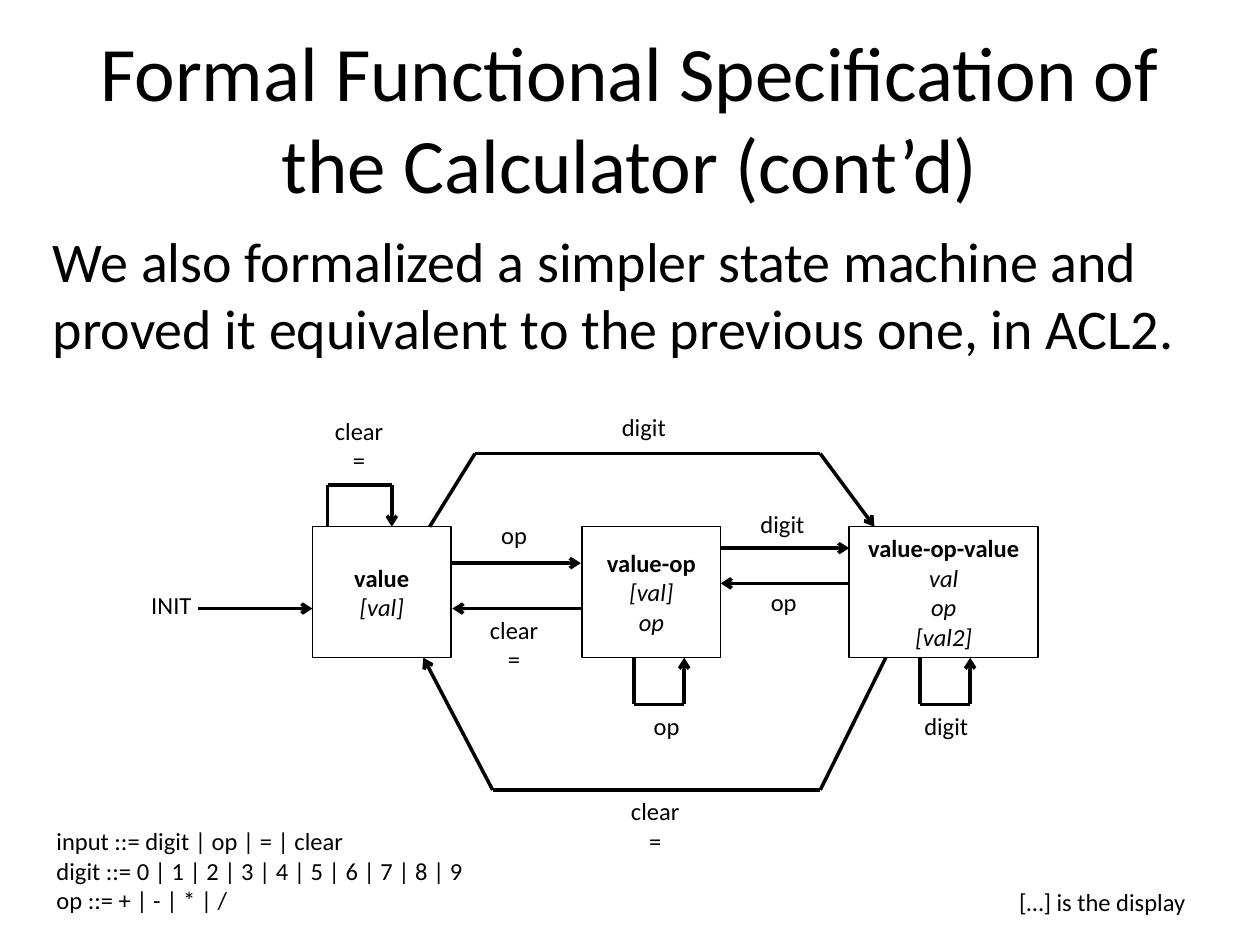
from itertools import pairwise

from lxml.etree import SubElement
from pptx import Presentation
from pptx.dml.color import RGBColor
from pptx.enum.shapes import MSO_CONNECTOR as Connector, MSO_SHAPE as Shape
from pptx.enum.text import MSO_ANCHOR as Anchor, MSO_AUTO_SIZE as AutoSize, PP_ALIGN as Align
from pptx.oxml.ns import qn
from pptx.util import Inches, Pt

BLACK = RGBColor(0x00, 0x00, 0x00)
FONT = "Calibri"
COLUMNS, ROWS = 100, 75
CELL = Inches(0.1)  # grid cell, square

# State boxes: left, width, name, remembered values (relative to the machine)
STATE_TOP, STATE_BOTTOM = 9.8, 20.2
STATES = [
    (13.8, 11, "value", ["[val]"]),
    (35.2, 11, "value-op", ["[val]", "op"]),
    (56.4, 15, "value-op-value", ["val", "op", "[val2]"]),
]

# Transitions: lines of the label, label centre, label top, points of the route
TRANSITIONS = [
    (["INIT"], 2.6, 14.3, [(4.7, 16.3), (13.8, 16.3)]),
    (["clear", "="], 17.5, 0.5,
     [(15, STATE_TOP), (15, 6.5), (20.1, 6.5), (20.1, STATE_TOP)]),
    (["op"], 29.8, 8.8, [(24.9, 12.7), (35.1, 12.7)]),
    (["clear", "="], 29.8, 16.3, [(35.1, 16.3), (24.9, 16.3)]),
    (["digit"], 40.1, 0.2,
     [(23.1, STATE_TOP), (26.7, 4), (54.1, 4), (58.4, STATE_TOP)]),
    (["digit"], 51.1, 7.9, [(46.2, 11.5), (56.4, 11.5)]),
    (["op"], 51.2, 14.1, [(56.4, 14.3), (46.2, 14.3)]),
    (["clear", "="], 41, 30.7,
     [(59.3, STATE_BOTTOM), (54.1, 30.7), (28.1, 30.7), (22.6, STATE_BOTTOM)]),
    (["op"], 41.9, 23.9,
     [(39.3, STATE_BOTTOM), (39.3, 23.9), (43.3, 23.9), (43.3, STATE_BOTTOM)]),
    (["digit"], 64.1, 23.9,
     [(62, STATE_BOTTOM), (62, 23.9), (66, 23.9), (66, STATE_BOTTOM)]),
]
LABEL_WIDTHS = {"INIT": 5.2, "clear": 5.9, "op": 4.1, "digit": 5.5}
LABEL_HEIGHTS = {1: 3.4, 2: 5.7}

GRAMMAR = [
    "input ::= digit | op | = | clear",
    "digit ::= 0 | 1 | 2 | 3 | 4 | 5 | 6 | 7 | 8 | 9",
    "op ::= + | - | * | /",
]


def cells(*counts):
    return [round(count * CELL) for count in counts]


def write(frame, lines, size, align=Align.LEFT):
    """Fill a text frame, one paragraph per line, and return the runs."""
    runs = []
    for index, line in enumerate(lines):
        paragraph = frame.add_paragraph() if index else frame.paragraphs[0]
        paragraph.alignment = align
        run = paragraph.add_run()
        run.text = line
        run.font.name, run.font.size = FONT, Pt(size)
        run.font.color.rgb = BLACK
        runs.append(run)
    return runs


def add_text(slide, box, lines, size=14, align=Align.LEFT, wrap=False):
    frame = slide.shapes.add_textbox(*cells(*box)).text_frame
    frame.word_wrap = wrap
    frame.auto_size = AutoSize.NONE if wrap else AutoSize.SHAPE_TO_FIT_TEXT
    write(frame, lines, size, align)
    return frame


def add_title(slide, box):
    title = "Formal Functional Specification of the Calculator (cont’d)"
    frame = add_text(slide, box, [title], 44, Align.CENTER, wrap=True)
    frame.vertical_anchor = Anchor.MIDDLE


def add_body(slide, box):
    body = ("We also formalized a simpler state machine and "
            "proved it equivalent to the previous one, in ACL2.")
    frame = add_text(slide, box, [body], 32, wrap=True)
    frame.paragraphs[0].space_before = Pt(6.4)


def add_state(slide, box, name, values):
    shape = slide.shapes.add_shape(Shape.RECTANGLE, *cells(*box))
    shape.shadow.inherit = False
    shape.fill.background()
    shape.line.color.rgb, shape.line.width = BLACK, Pt(1)
    shape.text_frame.vertical_anchor = Anchor.MIDDLE
    name_run, *value_runs = write(shape.text_frame, [name, *values], 14, Align.CENTER)
    name_run.font.bold = True
    for run in value_runs:
        run.font.italic = True


def add_route(slide, points):
    """Join the points with straight lines; the last one ends in an arrowhead."""
    for start, end in pairwise(points):
        connector = slide.shapes.add_connector(Connector.STRAIGHT, *cells(*start, *end))
        connector.line.color.rgb, connector.line.width = BLACK, Pt(2)
        SubElement(connector.element.spPr, qn("a:effectLst"))
    SubElement(connector.line._get_or_add_ln(), qn("a:tailEnd"), type="arrow")


def add_machine(slide, left, top):
    # States
    for state_left, width, name, values in STATES:
        box = (left + state_left, top + STATE_TOP, width, STATE_BOTTOM - STATE_TOP)
        add_state(slide, box, name, values)
    # Transitions with their labels
    for lines, centre, label_top, points in TRANSITIONS:
        add_route(slide, [(left + x, top + y) for x, y in points])
        width, height = LABEL_WIDTHS[lines[0]], LABEL_HEIGHTS[len(lines)]
        box = (left + centre - width / 2, top + label_top, width, height)
        add_text(slide, box, lines, align=Align.CENTER)


def main():
    presentation = Presentation()
    presentation.slide_width, presentation.slide_height = cells(COLUMNS, ROWS)
    slide = presentation.slides.add_slide(presentation.slide_layouts[6])

    add_title(slide, (5, 3, 90, 12.5))
    add_body(slide, (3.2, 17.5, 93.7, 49.5))
    add_machine(slide, left=11, top=32)
    # Legend
    add_text(slide, (3.5, 65.1, 34.6, 8.1), GRAMMAR)
    add_text(slide, (79.9, 69.9, 15.4, 3.4), ["[…] is the display"])

    presentation.save("out.pptx")


if __name__ == "__main__":
    main()
